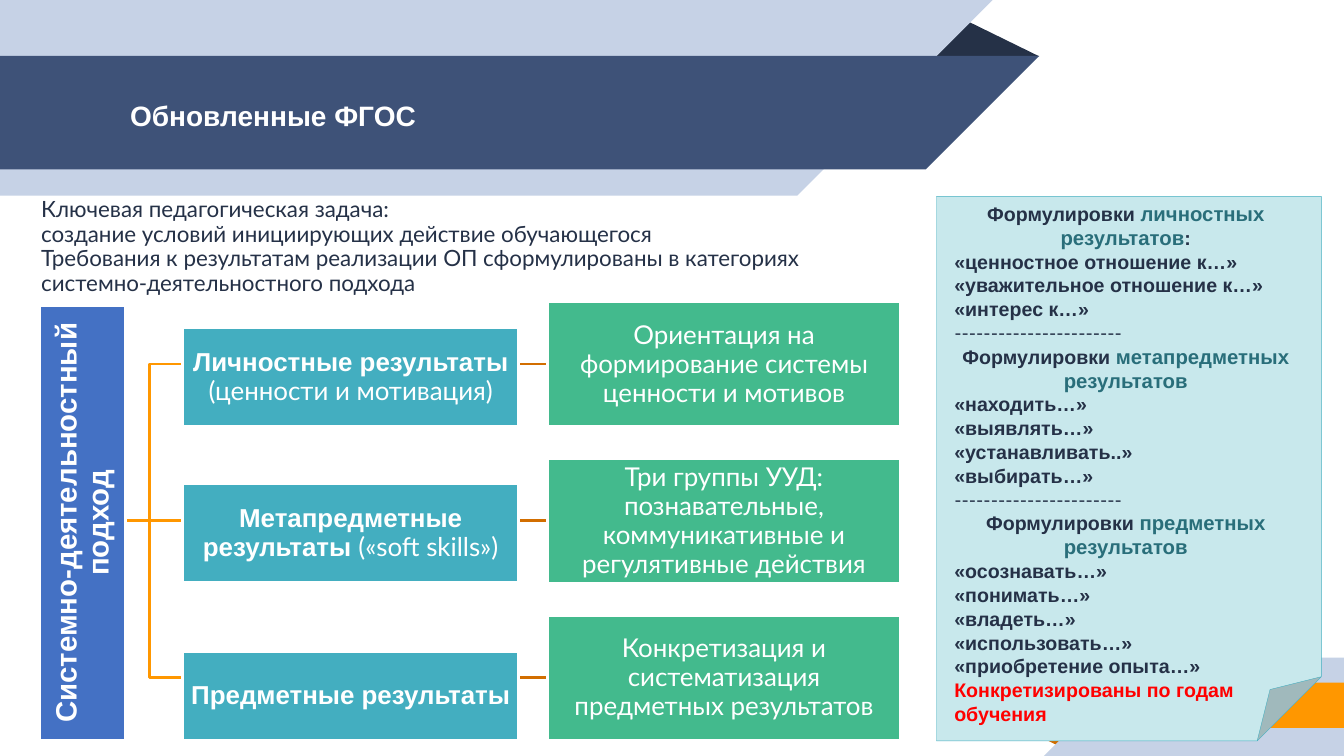
from dataclasses import dataclass
from typing import NamedTuple

from lxml import etree
from pptx import Presentation
from pptx.dml.color import RGBColor
from pptx.enum.shapes import MSO_CONNECTOR, MSO_SHAPE
from pptx.enum.text import MSO_ANCHOR, PP_ALIGN
from pptx.oxml.ns import qn
from pptx.util import Cm, Pt

LEFT, CENTER = PP_ALIGN.LEFT, PP_ALIGN.CENTER
TOP, MIDDLE = MSO_ANCHOR.TOP, MSO_ANCHOR.MIDDLE
RECT, NOTE = MSO_SHAPE.RECTANGLE, MSO_SHAPE.FOLDED_CORNER
STRAIGHT, ELBOW = MSO_CONNECTOR.STRAIGHT, MSO_CONNECTOR.ELBOW


class Style(NamedTuple):
    font: str
    size: float
    color: str
    bold: bool = False


@dataclass(frozen=True)
class Theme:
    navy: str = "3E5278"
    dark: str = "253147"
    pale: str = "C6D2E6"
    orange: str = "FF9700"
    rust: str = "D26E00"
    blue: str = "4471C4"
    teal: str = "43AEC0"
    green: str = "43BA8D"
    note: str = "C8E8EC"
    white: str = "FFFFFF"
    line: float = 2.04
    title: Style = Style("Arial", 20, "FFFFFF", True)
    intro: Style = Style("Lato", 16, "253147")
    bar: Style = Style("Arial", 21, "FFFFFF", True)
    strong: Style = Style("Arial", 18.5, "FFFFFF", True)
    plain: Style = Style("Lato", 18.5, "FFFFFF")
    item: Style = Style("Arial", 14, "253147", True)
    accent: Style = Style("Arial", 14.5, "296E7A", True)
    rule: Style = Style("Lato", 14, "253147")
    warning: Style = Style("Arial", 14, "FF0000", True)


T = Theme()


def rgb(color):
    return RGBColor.from_string(color)


def paint(sp, fill, line=None, width=T.line):
    sp.shadow.inherit = False
    sp.fill.solid()
    sp.fill.fore_color.rgb = rgb(fill)
    if line:
        sp.line.color.rgb = rgb(line)
        sp.line.width = Pt(width)
    else:
        sp.line.fill.background()


def box(s, kind, x, y, w, h, fill, line, width=T.line):
    sp = s.shapes.add_shape(kind, Cm(x), Cm(y), Cm(w), Cm(h))
    paint(sp, fill, line, width)
    return sp


def polygon(s, points, fill):
    start, *rest = [(Cm(x), Cm(y)) for x, y in points]
    fb = s.shapes.build_freeform(*start)
    fb.add_line_segments(rest, close=True)
    paint(fb.convert_to_shape(), fill)


def link(s, kind, x1, y1, x2, y2, color):
    c = s.shapes.add_connector(kind, Cm(x1), Cm(y1), Cm(x2), Cm(y2))
    c.line.color.rgb = rgb(color)
    c.line.width = Pt(T.line)
    etree.SubElement(c._element.spPr, qn("a:effectLst"))


def write(sp, paras, leading, inset=0, anchor=MIDDLE):
    """Each paragraph is (alignment, [(text, style), ...])."""
    tf = sp.text_frame
    tf.word_wrap = True
    tf.vertical_anchor = anchor
    tf.margin_left = tf.margin_right = Cm(inset)
    tf.margin_top = tf.margin_bottom = 0
    for i, (align, runs) in enumerate(paras):
        p = tf.add_paragraph() if i else tf.paragraphs[0]
        p.alignment = align
        p.line_spacing = Pt(leading)
        for text, style in runs:
            r = p.add_run()
            r.text = text
            r.font.name, r.font.size = style.font, Pt(style.size)
            r.font.bold = style.bold
            r.font.color.rgb = rgb(style.color)


def text_box(s, x, y, w, h, paras, leading, anchor=TOP):
    sp = s.shapes.add_textbox(Cm(x), Cm(y), Cm(w), Cm(h))
    write(sp, paras, leading, anchor=anchor)


def header(s, x, y, w, h):
    def band(top, width, height, fill):
        # The right edge is cut at 45 degrees
        polygon(s, [(x, y + top), (x + width, y + top),
                    (x + width - height, y + top + height), (x, y + top + height)], fill)

    polygon(s, [(x + w - 1.96, y + 0.46), (x + w - 2.9, y + 1.42), (x + w, y + 1.42)], T.dark)
    band(0, w - 1.17, h, T.pale)
    band(1.41, w, 2.86, T.navy)
    text_box(s, x + 3.28, y + 1.48, w - 6.13, 2.86,
             [(LEFT, [("Обновленные ФГОС", T.title)])], 24, MIDDLE)


def corner(s, x, y, w, h):
    def band(left, top, height, fill):
        polygon(s, [(x + w, y + top), (x + left + height, y + top),
                    (x + left, y + top + height), (x + w, y + top + height)], fill)

    polygon(s, [(x, y + 1.75), (x + 1.45, y + 1.75), (x + 0.99, y + 2.25)], T.rust)
    band(0.58, 0, h, T.pale)
    band(0, 0.63, 1.14, T.orange)


def intro(s, x, y, w, h):
    lines = ["Ключевая педагогическая задача:",
             "создание условий инициирующих действие обучающегося",
             "Требования к результатам реализации ОП сформулированы в категориях "
             "системно-деятельностного подхода"]
    text_box(s, x, y, w, h, [(LEFT, [(line, T.intro)]) for line in lines], 17.5)


def diagram(s, x, y, w, h):
    # Each row: top and height of the result box, its text, lines of the explanation
    rows = [
        (0.66, 2.49, [[("Личностные результаты", T.strong)],
                      [("(ценности и мотивация)", T.plain)]],
         ["Ориентация на формирование системы ценности и мотивов"]),
        (4.59, 2.49, [[("Метапредметные результаты ", T.strong), ("(«soft skills»)", T.plain)]],
         ["Три группы УУД:", "познавательные,", "коммуникативные и регулятивные действия"]),
        (8.81, 2.24, [[("Предметные результаты", T.strong)]],
         ["Конкретизация и систематизация предметных результатов"]),
    ]
    bar_w, result_x, result_w, goal_x, goal_h = 2.16, 3.6, 8.47, 12.8, 3.15
    pitch = (h - goal_h) / 2
    middle = y + h / 2

    # Branches, then the boxes above them
    for i in range(len(rows)):
        cy = y + goal_h / 2 + i * pitch
        kind = STRAIGHT if i == 1 else ELBOW
        link(s, kind, x + 1.92, middle, x + result_x, cy, T.orange)
        link(s, STRAIGHT, x + result_x + result_w, cy, x + goal_x, cy, T.rust)

    bar = box(s, RECT, x, y + 0.1, bar_w, h - 0.1, T.blue, T.white)
    write(bar, [(CENTER, [("Системно-деятельностный подход", T.bar)])], 22.9)
    bar.text_frame._txBody.bodyPr.set("vert", "vert270")

    for i, (top, height, result, goal) in enumerate(rows):
        sp = box(s, RECT, x + result_x, y + top, result_w, height, T.teal, T.white)
        write(sp, [(CENTER, runs) for runs in result], 20.6, 0.15)
        sp = box(s, RECT, x + goal_x, y + i * pitch, w - goal_x, goal_h, T.green, T.white)
        write(sp, [(CENTER, [(line, T.plain)]) for line in goal], 20.6, 0.6)


def wording_note(s, x, y, w, h):
    sections = [
        ("личностных результатов", ":",
         ["«ценностное отношение к…»", "«уважительное отношение к…»", "«интерес к…»"]),
        ("метапредметных результатов", "",
         ["«находить…»", "«выявлять…»", "«устанавливать..»", "«выбирать…»"]),
        ("предметных результатов", "",
         ["«осознавать…»", "«понимать…»", "«владеть…»", "«использовать…»"]),
    ]
    paras = []
    for i, (kind, tail, items) in enumerate(sections):
        if i:
            paras.append((LEFT, [("-" * 23, T.rule)]))
        heading = [("Формулировки ", T.item), (kind, T.accent)]
        if tail:
            heading.append((tail, T.item))
        paras.append((CENTER, heading))
        paras += [(LEFT, [(item, T.item)]) for item in items]
    paras.append((LEFT, [("«приобретение опыта…» ", T.item),
                         ("Конкретизированы по годам обучения", T.warning)]))
    box(s, NOTE, x, y, w, h, T.note, T.teal, 0.25)
    text_box(s, x + 0.45, y + 0.13, w - 1.06, h - 0.44, paras, 17)


def main():
    prs = Presentation()
    prs.slide_width, prs.slide_height = Cm(33.87), Cm(19.05)
    s = prs.slides.add_slide(prs.slide_layouts[6])
    header(s, 0, 0, 26.19, 4.93)
    corner(s, 25.73, 16.57, 8.14, 2.48)
    intro(s, 1.04, 4.98, 19.5, 2.57)
    diagram(s, 1, 7.6, 21.69, 11.05)
    wording_note(s, 23.6, 4.95, 9.7, 13.72)
    prs.save("out.pptx")


if __name__ == "__main__":
    main()
